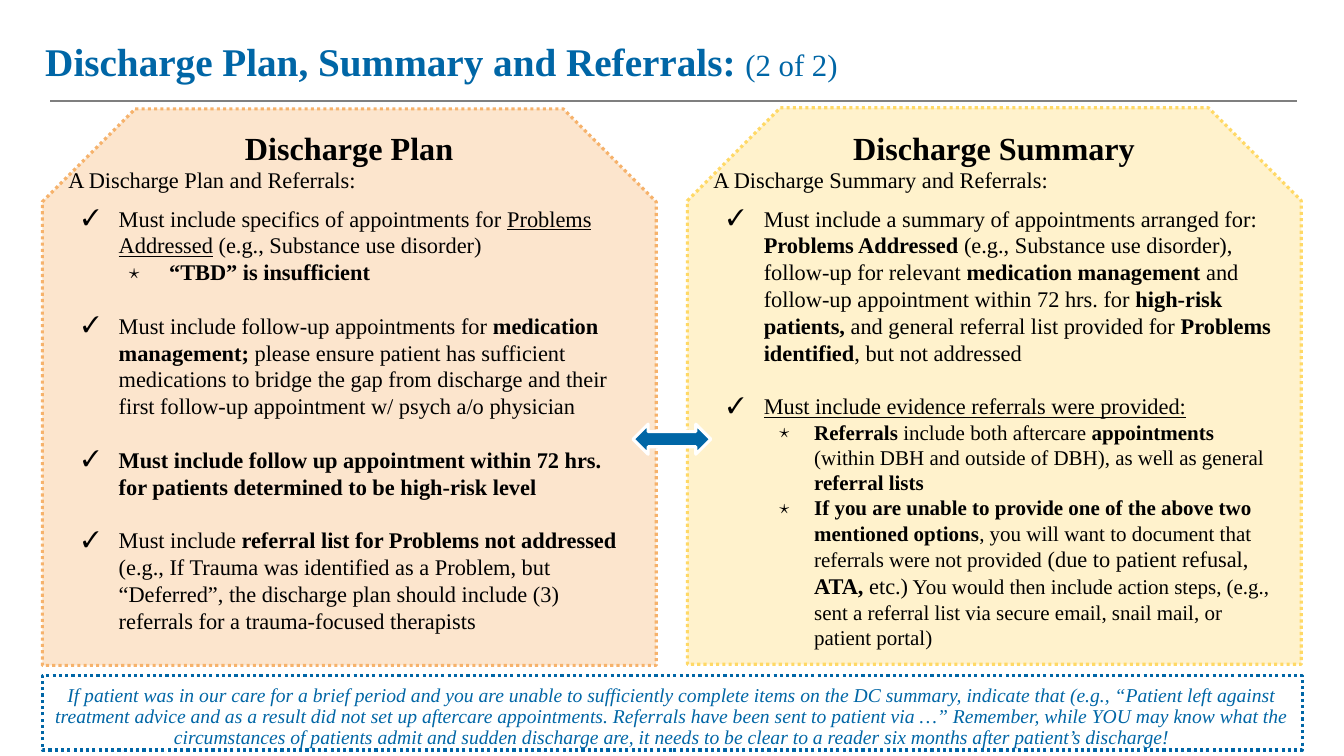
"""Build the discharge plan, summary and referrals slide."""
import pptx
import pptx.util
import pptx.dml.color
import pptx.enum.dml
import pptx.enum.shapes
import pptx.enum.text
import lxml.etree

Pt = pptx.util.Pt
RGB = pptx.dml.color.RGBColor
SHAPE = pptx.enum.shapes.MSO_SHAPE
ALIGN = pptx.enum.text.PP_ALIGN
ANCHOR = pptx.enum.text.MSO_ANCHOR
DOT = pptx.enum.dml.MSO_LINE.ROUND_DOT

BLUE, BLACK, WHITE, GREY = RGB(0, 0x66, 0xA6), RGB(0, 0, 0), RGB(255, 255, 255), RGB(0x7F, 0x7F, 0x7F)
PEACH, ORANGE = RGB(0xFC, 0xE5, 0xCD), RGB(0xF6, 0xB2, 0x6B)
CREAM, YELLOW = RGB(0xFF, 0xF2, 0xCC), RGB(0xFF, 0xD9, 0x66)
FONT = "Times New Roman"

B = {"bold": True}
U = {"underline": True}
S = {"size": Pt(15)}
BS = {**B, **S}
HEAD = {"size": Pt(23), "bold": True}

CENTER = {"alignment": ALIGN.CENTER}
TIGHT = {"line_spacing": 0.9}
FIRST = {"space_before": Pt(8)}
GAP = {"space_before": Pt(19)}
CHECK = ("✓", 36, -26)
STAR = ("⋆", 72, -29)
STAR_SHORT = ("⋆", 72, -25)

TITLE = [(None, TIGHT, [
    ("Discharge Plan, Summary and Referrals: ", {"size": Pt(28), "bold": True}),
    ("(2 of 2)", {"size": Pt(22)})])]

PLAN = [
    (None, CENTER, [("Discharge Plan", HEAD)]),
    (None, {}, [("A Discharge Plan and Referrals:", {})]),
    (CHECK, FIRST, [("Must include specifics of appointments for ", {}), ("Problems Addressed", U),
                    (" (e.g., Substance use disorder)", {})]),
    (STAR, {}, [("“TBD” is insufficient", B)]),
    (CHECK, GAP, [("Must include follow-up appointments for ", {}), ("medication management; ", B),
                  ("please ensure patient has sufficient medications to bridge the gap from discharge "
                   "and their first follow-up appointment w/ psych a/o physician", {})]),
    (CHECK, GAP, [("Must include follow up appointment within 72 hrs. for patients determined "
                   "to be high-risk level", B)]),
    (CHECK, GAP, [("Must include ", {}), ("referral list for Problems not addressed ", B),
                  ("(e.g., If Trauma was identified as a Problem, but “Deferred”, the discharge plan "
                   "should include (3) referrals for a trauma-focused therapists", {})]),
]

SUMMARY = [
    (None, CENTER, [("Discharge Summary", HEAD)]),
    (None, {}, [("A Discharge Summary and Referrals:", {})]),
    (CHECK, FIRST, [("Must include a summary of appointments arranged for: ", {}),
                    ("Problems Addressed ", B),
                    ("(e.g., Substance use disorder), follow-up for relevant ", {}),
                    ("medication management ", B),
                    ("and follow-up appointment within 72 hrs. for ", {}),
                    ("high-risk patients, ", B),
                    ("and general referral list provided for ", {}),
                    ("Problems identified", B), (", but not addressed", {})]),
    (CHECK, GAP, [("Must include evidence referrals were provided:", U)]),
    (STAR_SHORT, {}, [("Referrals", BS), (" include both aftercare ", S), ("appointments", BS),
                      (" (within DBH and outside of DBH), as well as general ", S),
                      ("referral lists", BS)]),
    (STAR_SHORT, {}, [("If you are unable to provide one of the above two mentioned options", BS),
                      (", you will want to document that referrals were not provided", S),
                      (" (due to patient refusal, ", {}), ("ATA, ", B), ("etc.)", {}),
                      (" You would then include action steps, (e.g., sent a referral list via "
                       "secure email, snail mail, or patient portal)", S)]),
]

NOTE = [(None, {**CENTER, **TIGHT}, [(
    "If patient was in our care for a brief period and you are unable to sufficiently complete items "
    "on the DC summary, indicate that (e.g., “Patient left against treatment advice and as a result "
    "did not set up aftercare appointments. Referrals have been sent to patient via …” Remember, "
    "while YOU may know what the circumstances of patients admit and sudden discharge are, it needs "
    "to be clear to a reader six months after patient’s discharge!", {"size": Pt(14), "italic": True})])]

CARD_LEFT, CARD_STEP, CARD_W, CARD_H = 30.25, 460.75, 438.5, 397.5
CARDS = [(77.75, PEACH, ORANGE, PLAN), (77, CREAM, YELLOW, SUMMARY)]


def apply(target, values):
    for name, value in values.items():
        setattr(target, name, value)


def add_bullet(p, char, margin, indent):
    pPr = p._p.get_or_add_pPr()
    pPr.set("marL", str(Pt(margin)))
    pPr.set("indent", str(Pt(indent)))
    ns = "{http://schemas.openxmlformats.org/drawingml/2006/main}"
    lxml.etree.SubElement(pPr, ns + "buFont").set("typeface", FONT)
    lxml.etree.SubElement(pPr, ns + "buChar").set("char", char)


def write(sp, paragraphs, color, inset_y=7.2, anchor=ANCHOR.TOP):
    tf = sp.text_frame
    apply(tf, {"word_wrap": True, "vertical_anchor": anchor,
               "margin_left": Pt(7.2), "margin_right": Pt(7.2),
               "margin_top": Pt(inset_y), "margin_bottom": Pt(inset_y)})
    for i, (bullet, layout, runs) in enumerate(paragraphs):
        p = tf.add_paragraph() if i else tf.paragraphs[0]
        if bullet:
            add_bullet(p, *bullet)
        apply(p, {"alignment": ALIGN.LEFT, **layout})
        for text, style in runs:
            r = p.add_run()
            r.text = text
            apply(r.font, {"name": FONT, "size": Pt(16), **style})
            r.font.color.rgb = color


def add_shape(s, kind, box, fill, line, dash=None, adjustments=()):
    sp = s.shapes.add_shape(kind, *map(Pt, box))
    sp.shadow.inherit = False
    if fill is None:
        sp.fill.background()
    else:
        sp.fill.solid()
        sp.fill.fore_color.rgb = fill
    sp.line.color.rgb = line
    sp.line.width = Pt(2.25)
    if dash:
        sp.line.dash_style = dash
    for i, value in enumerate(adjustments):
        sp.adjustments[i] = value
    return sp


def add_rule(s):
    line = s.shapes.add_connector(pptx.enum.shapes.MSO_CONNECTOR.STRAIGHT,
                                  Pt(36), Pt(72), Pt(926.5), Pt(72))
    line.line.color.rgb = GREY
    line.line.width = Pt(1.5)
    spPr = line._element.spPr
    lxml.etree.SubElement(spPr, "{http://schemas.openxmlformats.org/drawingml/2006/main}effectLst")


def main():
    prs = pptx.Presentation()
    prs.slide_width, prs.slide_height = Pt(960), Pt(540)
    s = prs.slides.add_slide(prs.slide_layouts[6])
    add_rule(s)
    for i, (top, fill, line, text) in enumerate(CARDS):
        left = CARD_LEFT + i * CARD_STEP
        add_shape(s, SHAPE.SNIP_2_SAME_RECTANGLE, (left, top, CARD_W, CARD_H),
                  fill, line, DOT, (0.167, 0))
        sp = s.shapes.add_textbox(Pt(left + 11.5), Pt(84.25), Pt(CARD_W - 23), Pt(390))
        write(sp, text, BLACK)
    write(s.shapes.add_textbox(Pt(25.25), Pt(16.5), Pt(767), Pt(57.5)),
          TITLE, BLUE, 3.6, ANCHOR.MIDDLE)
    note = add_shape(s, SHAPE.RECTANGLE, (30.25, 482.5, 900, 53.25), None, BLUE, DOT)
    write(note, NOTE, BLUE)
    add_shape(s, SHAPE.LEFT_RIGHT_ARROW, (452.25, 303, 55.5, 21.5), BLUE, WHITE)
    prs.save("out.pptx")


if __name__ == "__main__":
    main()
